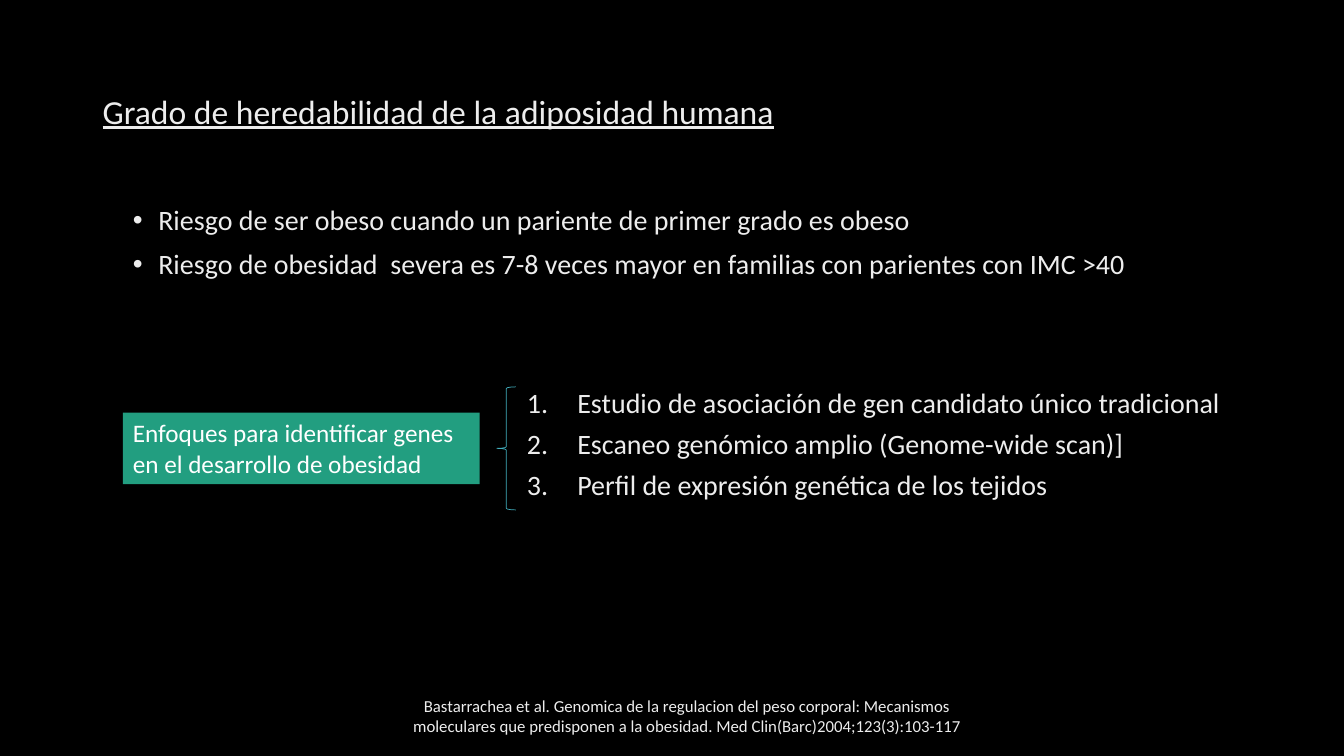
import pptx
import pptx.dml.color
import pptx.enum.shapes
import pptx.enum.text
import pptx.oxml.ns
import pptx.util
from lxml import etree

Cm = pptx.util.Cm
Pt = pptx.util.Pt
RGBColor = pptx.dml.color.RGBColor
ALIGN = pptx.enum.text.PP_ALIGN
ANCHOR = pptx.enum.text.MSO_ANCHOR
SHAPE = pptx.enum.shapes.MSO_SHAPE

BLACK = RGBColor(0x00, 0x00, 0x00)
SILVER = RGBColor(0xED, 0xED, 0xED)
WHITE = RGBColor(0xFF, 0xFF, 0xFF)
GREEN = RGBColor(0x22, 0x9E, 0x80)
TEAL = RGBColor(0x41, 0xAE, 0xBD)

TITLE = "Grado de heredabilidad de la adiposidad humana"
RISKS = [
    "Riesgo de ser obeso cuando un pariente de primer grado es obeso",
    "Riesgo de obesidad  severa es 7-8 veces mayor en familias con parientes con IMC >40",
]
APPROACH = "Enfoques para identificar genes en el desarrollo de obesidad"
METHODS = [
    "Estudio de asociación de gen candidato único tradicional",
    "Escaneo genómico amplio (Genome-wide scan)]",
    "Perfil de expresión genética de los tejidos",
]
CITATION = (
    "Bastarrachea et al. Genomica de la regulacion del peso corporal: "
    "Mecanismos moleculares que predisponen a la obesidad. "
    "Med Clin(Barc)2004;123(3):103-117"
)

BULLET = [("buFont", {"typeface": "Arial"}), ("buChar", {"char": "•"})]
NUMBER = [("buFont", {"typeface": "+mj-lt"}), ("buAutoNum", {"type": "arabicPeriod"})]


def apply_format(target, values):
    for name, value in values.items():
        setattr(target, name, value)


def add_marker(para, marker, indent):
    """Hang the paragraph by the indent and give it a bullet or number."""
    properties = para._p.get_or_add_pPr()
    properties.set("marL", str(indent))
    properties.set("indent", str(-indent))
    for tag, attributes in marker:
        etree.SubElement(properties, pptx.oxml.ns.qn("a:" + tag), attributes)


def write(frame, lines, size, color=SILVER, font=None, para_format=None,
          gap=0, marker=None, indent=0):
    """Fill the frame with one paragraph per line; gap separates them."""
    frame.word_wrap = True
    for index, line in enumerate(lines):
        para = frame.add_paragraph() if index else frame.paragraphs[0]
        apply_format(para, para_format or {})
        if index and gap:
            para.space_before = Pt(gap)
        if marker:
            add_marker(para, marker, indent)
        span = para.add_run()
        span.text = line
        apply_format(span.font, {"name": "Calibri", "size": Pt(size), **(font or {})})
        span.font.color.rgb = color


def add_text(page, left, top, width, height, anchor=ANCHOR.TOP):
    frame = page.shapes.add_textbox(left, top, width, height).text_frame
    frame.vertical_anchor = anchor
    return frame


def add_plain_shape(page, kind, left, top, width, height):
    shape = page.shapes.add_shape(kind, left, top, width, height)
    shape.shadow.inherit = False
    return shape


def add_title(page, left, top, width, height):
    frame = add_text(page, left, top, width, height, ANCHOR.MIDDLE)
    write(frame, [TITLE], 24, font={"underline": True},
          para_format={"line_spacing": 0.9})


def add_risks(page, left, top, width, height):
    write(add_text(page, left, top, width, height), RISKS, 20, gap=10,
          para_format={"line_spacing": 0.9}, marker=BULLET, indent=Cm(0.64))


def add_approaches(page, left, top, width, height):
    """Label on the left, then a brace opening onto the numbered methods."""
    label_width, label_height = Cm(8.99), Cm(1.8)
    brace_left, brace_width = left + Cm(9.42), Cm(0.48)
    list_left = brace_left + brace_width + Cm(0.03)

    write(add_text(page, list_left, top, left + width - list_left, height),
          METHODS, 20, gap=10, para_format={"line_spacing": 0.8},
          marker=NUMBER, indent=Cm(1.27))

    label = add_plain_shape(page, SHAPE.RECTANGLE, left,
                            top + (height - label_height) // 2,
                            label_width, label_height)
    label.fill.solid()
    label.fill.fore_color.rgb = GREEN
    label.line.fill.background()
    label.text_frame.vertical_anchor = ANCHOR.TOP
    write(label.text_frame, [APPROACH], 18, WHITE,
          para_format={"alignment": ALIGN.LEFT})

    brace = add_plain_shape(page, SHAPE.LEFT_BRACE, brace_left, top,
                            brace_width, height)
    brace.fill.background()
    brace.line.color.rgb = TEAL
    brace.line.width = Pt(0.5)


def add_citation(page, left, top, width, height):
    frame = add_text(page, left, top, width, height, ANCHOR.MIDDLE)
    write(frame, [CITATION], 12, para_format={"alignment": ALIGN.CENTER})


def main():
    deck = pptx.Presentation()
    apply_format(deck, {"slide_width": Cm(33.87), "slide_height": Cm(19.05)})
    page = deck.slides.add_slide(deck.slide_layouts[6])
    page.background.fill.solid()
    page.background.fill.fore_color.rgb = BLACK

    add_title(page, Cm(2.34), Cm(1.02), Cm(29.21), Cm(3.68))
    add_risks(page, Cm(3.1), Cm(5.08), Cm(28.42), Cm(3.1))
    add_approaches(page, Cm(3.1), Cm(9.75), Cm(28.57), Cm(3.1))
    add_citation(page, Cm(9.37), Cm(17.53), Cm(15.9), Cm(1.02))
    deck.save("out.pptx")


if __name__ == "__main__":
    main()
